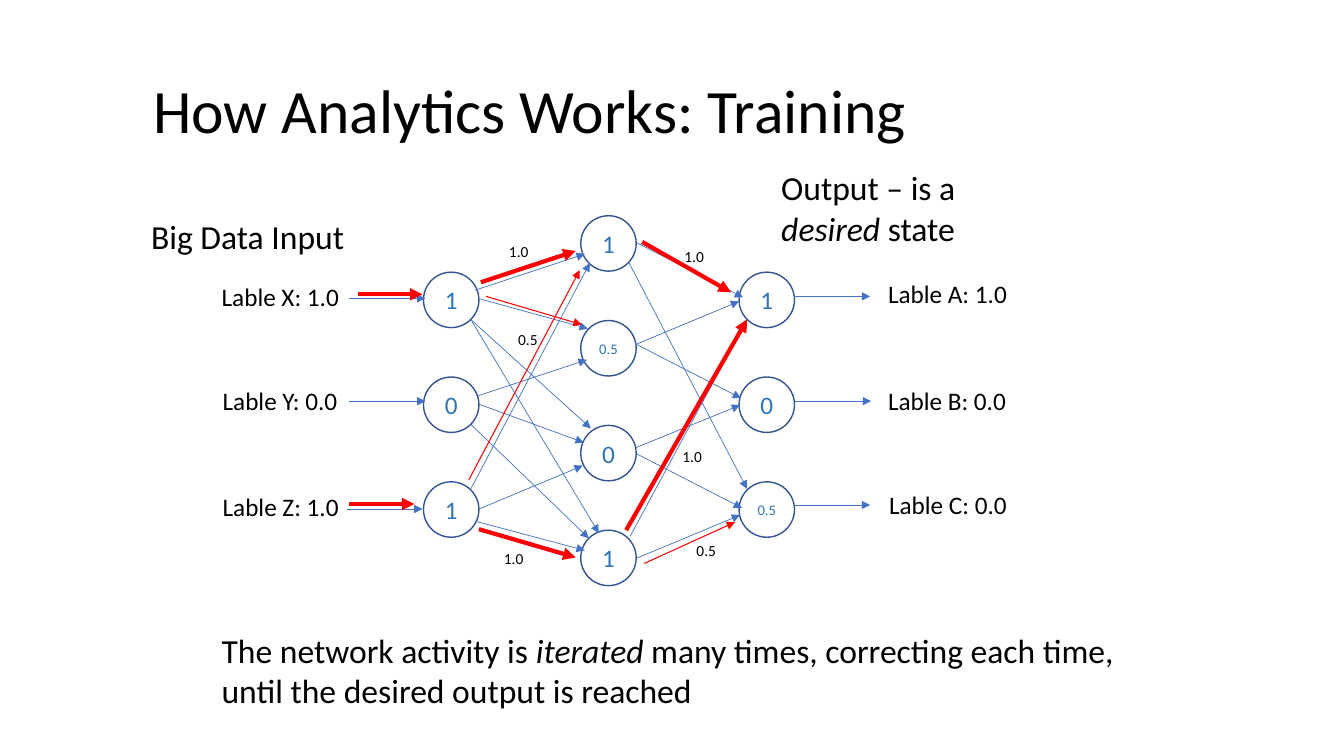
from pptx import Presentation
from pptx.dml.color import RGBColor
from pptx.enum import shapes, text
from pptx.oxml import parse_xml
from pptx.oxml.ns import nsdecls
from pptx.util import Inches, Pt

HUES = {"ink": "000000", "paper": "FFFFFF", "ring": "325491",
        "value": "2E75B6", "link": "4472C4", "active": "FF0000"}
FONT = "Calibri"

deck = Presentation()
deck.slide_width, deck.slide_height = Inches(13.33), Inches(7.5)
slide = deck.slides.add_slide(deck.slide_layouts[6])


def write(para, words, size, hue="ink", slant=False):
    run = para.add_run()
    run.text = words
    run.font.name, run.font.size = FONT, Pt(size)
    run.font.italic = slant
    run.font.color.rgb = RGBColor.from_string(HUES[hue])


def label(x, y, wide, high, size, *parts, wrap=True):
    """Add a text box; every second part is italic."""
    box = slide.shapes.add_textbox(Inches(x), Inches(y), Inches(wide), Inches(high))
    box.text_frame.word_wrap = wrap
    for i, words in enumerate(parts):
        write(box.text_frame.paragraphs[0], words, size, slant=i % 2 == 1)
    return box.text_frame


# Title
title = label(0.92, 0.4, 11.5, 1.45, 44, "\tHow Analytics Works: Training")
title.vertical_anchor = text.MSO_ANCHOR.MIDDLE
title.paragraphs[0].line_spacing = 0.9

# Neurons: left, top, step and values of each layer
layers = [
    (4.2, 2.7, 1.04, ["1", "0", "1"]),
    (5.76, 2.14, 1.04, ["1", "0.5", "0", "1"]),
    (7.33, 2.7, 1.04, ["1", "0", "0.5"]),
]
for left, top, step, values in layers:
    for row, value in enumerate(values):
        node = slide.shapes.add_shape(
            shapes.MSO_SHAPE.OVAL, Inches(left), Inches(top + row * step),
            Inches(0.55), Inches(0.55))
        node.shadow.inherit = False
        node.fill.solid()
        node.fill.fore_color.rgb = RGBColor.from_string(HUES["paper"])
        node.line.color.rgb = RGBColor.from_string(HUES["ring"])
        node.line.width = Pt(1)
        frame = node.text_frame
        frame.margin_left = frame.margin_right = 0
        frame.word_wrap = False
        frame.vertical_anchor = text.MSO_ANCHOR.MIDDLE
        frame.paragraphs[0].alignment = text.PP_ALIGN.CENTER
        write(frame.paragraphs[0], value, 10.5 if value == "0.5" else 18, "value")

# Arrows: x and y of the start, x and y of the end
links = [
    # Input to hidden layer
    (4.71, 2.88, 5.8, 2.52), (4.73, 3.93, 5.82, 3.57), (4.75, 5.05, 5.78, 4.62),
    (4.67, 4.21, 5.84, 5.34), (4.67, 4.85, 5.85, 2.61), (4.67, 3.17, 5.86, 4.25),
    (4.74, 2.96, 5.83, 3.26), (4.71, 5.17, 5.8, 5.46), (4.75, 4.01, 5.79, 4.39),
    (4.67, 3.17, 5.94, 5.29),
    # Hidden to output layer
    (6.32, 2.41, 7.37, 2.95), (6.3, 3.41, 7.35, 3.95), (6.31, 4.5, 7.36, 5.04),
    (6.31, 5.54, 7.34, 5.11), (6.31, 4.44, 7.34, 4.02), (6.3, 3.42, 7.33, 2.99),
    (6.24, 2.61, 7.41, 4.85), (6.25, 5.32, 7.41, 3.17),
    # Into and out of the network
    (3.46, 2.96, 4.22, 2.96), (3.46, 3.98, 4.22, 3.98), (3.44, 5.05, 4.19, 5.05),
    (7.88, 2.94, 8.63, 2.94), (7.89, 3.98, 8.64, 3.98), (7.88, 5.01, 8.63, 5.01),
]
strong = [
    (3.55, 2.92, 4.19, 2.92), (3.46, 5, 4.11, 5), (4.77, 2.8, 5.71, 2.49),
    (6.37, 2.4, 7.25, 2.9), (4.75, 5.25, 5.71, 5.53), (6.21, 5.26, 7.41, 3.17),
]
weak = [
    (4.82, 2.94, 5.77, 3.22), (4.65, 4.76, 5.75, 2.68), (6.39, 5.59, 7.29, 5.18),
]
for group, hue, width in [(links, "link", 0.5), (strong, "active", 3),
                          (weak, "active", 0.75)]:
    for ends in group:
        arrow = slide.shapes.add_connector(
            shapes.MSO_CONNECTOR.STRAIGHT, *[Inches(v) for v in ends])
        arrow.line.color.rgb = RGBColor.from_string(HUES[hue])
        arrow.line.width = Pt(width)
        arrow.line._get_or_add_ln().append(
            parse_xml(f'<a:tailEnd {nsdecls("a")} type="triangle"/>'))
        arrow._element.spPr.append(parse_xml(f'<a:effectLst {nsdecls("a")}/>'))

# Input and output labels
for x, y, words in [(2.1, 2.74, "Lable X: 1.0"), (2.11, 3.77, "Lable Y: 0.0"),
                    (2.11, 4.83, "Lable Z: 1.0")]:
    label(x, y, 1.48, 0.4, 18, words)
for x, y, words in [(8.71, 2.71, "Lable A: 1.0"), (8.71, 3.77, "Lable B: 0.0"),
                    (8.72, 4.81, "Lable C: 0.0")]:
    label(x, y, 1.4, 0.4, 18, words, wrap=False)

# Weights on the active arrows
for x, y, weight in [(4.95, 2.35, "1.0"), (6.69, 2.4, "1.0"), (6.67, 4.39, "1.0"),
                     (4.9, 5.4, "1.0"), (5.04, 3.23, "0.5"), (6.81, 5.32, "0.5")]:
    label(x, y, 0.56, 0.29, 11, weight)

# Headings and closing remark
label(2.1, 6.2, 9.63, 0.91, 24, "The network activity is ", "iterated",
      " many times, correcting each time, until the desired output is reached")
label(1.4, 2.09, 2.12, 0.5, 24, "Big Data Input")
label(7.65, 1.61, 2.12, 0.91, 24, "Output – is a ", "desired ", "state")

deck.save("out.pptx")
